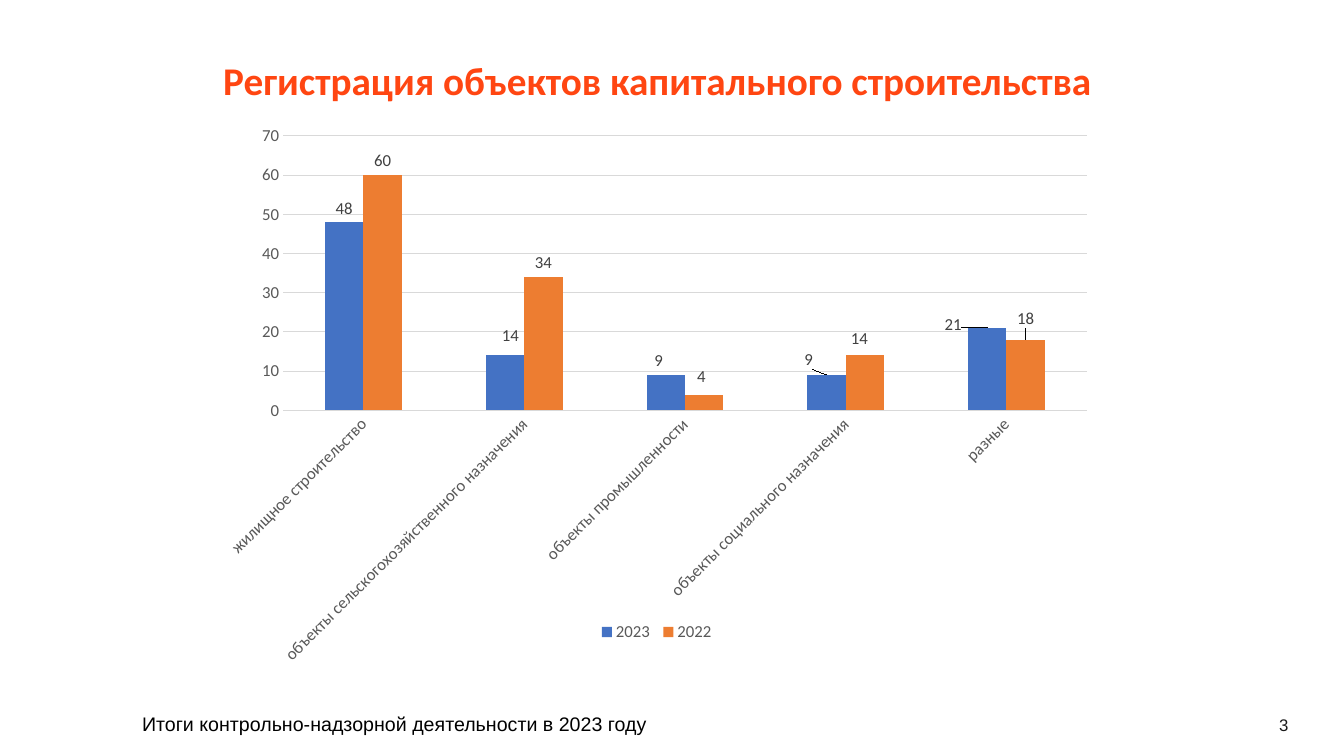
from dataclasses import dataclass

from lxml.etree import SubElement
from pptx import Presentation
from pptx.chart.data import CategoryChartData
from pptx.dml.color import RGBColor
from pptx.enum.chart import XL_CHART_TYPE, XL_LABEL_POSITION, XL_LEGEND_POSITION, XL_TICK_MARK
from pptx.enum.text import MSO_ANCHOR, PP_ALIGN
from pptx.oxml.ns import qn
from pptx.util import Cm, Pt

TITLE = "Регистрация объектов капитального строительства"
FOOTER = "Итоги контрольно-надзорной деятельности в 2023 году"
NUMBER = "3"
GROUPS = [
    "жилищное строительство",
    "объекты сельскогохозяйственного назначения",
    "объекты промышленности",
    "объекты социального назначения",
    "разные",
]
YEARS = [
    ("2023", [48, 14, 9, 9, 21], "4472C4"),
    ("2022", [60, 34, 4, 14, 18], "ED7D31"),
]
SHIFTS = {
    "2023": {1: (0.6, -1), 2: (-0.8, 0), 3: (-2, -0.3), 4: (-3.8, 1.8)},
    "2022": {2: (-0.3, -0.6), 3: (-0.6, -0.5), 4: (0, -1.2)},
}
BOXES = {
    "title": (1.47, 1.12, 30.18, 1.93),
    "chart": (5.26, 2.9, 22.58, 15.06),
    "footer": (3.58, 17.93, 30.12, 0.61),
    "number": (31.83, 17.96, 0.64, 0.61),
}
PLOT = (8.3, 3.5, 89.7, 45.9)
LEGEND = (43, 84, 14, 5)


@dataclass(frozen=True)
class Theme:
    head: str = "FF4612"
    ink: str = "000000"
    page: str = "1A1A1A"
    axis: str = "595959"
    label: str = "404040"
    grid: str = "D9D9D9"
    face: str = "Calibri"
    plain: str = "Arial"
    large: int = 28
    mid: int = 14
    small: int = 12


THEME = Theme()


def style(font, face, size, color, bold=False):
    font.name = face
    font.size = Pt(size)
    font.bold = bold
    font.color.rgb = RGBColor.from_string(color)


def write(frame, text, face=THEME.plain, size=THEME.mid, color=THEME.ink,
          bold=False, align=PP_ALIGN.LEFT, anchor=MSO_ANCHOR.TOP, space=1.0, inset=0):
    frame.word_wrap = True
    frame.vertical_anchor = anchor
    frame.margin_left = frame.margin_right = Cm(inset)
    frame.margin_top = frame.margin_bottom = Cm(inset / 2)
    para = frame.paragraphs[0]
    para.alignment = align
    para.line_spacing = space
    run = para.add_run()
    run.text = text
    style(run.font, face, size, color, bold)


def place(node, index, spot, inner=False):
    for old in node.findall(qn("c:layout")):
        node.remove(old)
    layout = SubElement(node, qn("c:layout"))
    node.insert(index, layout)
    manual = SubElement(layout, qn("c:manualLayout"))
    rules = [("layoutTarget", "inner")] if inner else []
    if len(spot) == 4:
        rules += [("xMode", "edge"), ("yMode", "edge")]
    rules += [(key, f"{part / 100:.3f}") for key, part in zip("xywh", spot)]
    for key, value in rules:
        SubElement(manual, qn(f"c:{key}")).set("val", value)


def draw_chart(slide):
    data = CategoryChartData()
    data.categories = GROUPS
    for year, values, color in YEARS:
        data.add_series(year, values)
    box = map(Cm, BOXES["chart"])
    chart = slide.shapes.add_chart(XL_CHART_TYPE.COLUMN_CLUSTERED, *box, data).chart
    chart.has_title = False
    style(chart.font, THEME.face, THEME.small, THEME.axis)
    line = RGBColor.from_string(THEME.grid)
    cats, vals = chart.category_axis, chart.value_axis
    for axis in (cats, vals):
        axis.major_tick_mark = axis.minor_tick_mark = XL_TICK_MARK.NONE
        style(axis.tick_labels.font, THEME.face, THEME.small, THEME.axis)
    cats.tick_labels.font._element.getparent().getparent().getparent().find(
        qn("a:bodyPr")).set("rot", "-2700000")
    vals.minimum_scale, vals.maximum_scale, vals.major_unit = 0, 70, 10
    vals.has_major_gridlines = True
    vals.format.line.fill.background()
    for rule in (cats.format.line, vals.major_gridlines.format.line):
        rule.color.rgb = line
        rule.width = Pt(0.75)
    plot = chart.plots[0]
    plot.gap_width, plot.overlap = 219, 0
    plot.vary_by_categories = False
    for bars, (year, values, color) in zip(plot.series, YEARS):
        bars.format.fill.solid()
        bars.format.fill.fore_color.rgb = RGBColor.from_string(color)
        bars.invert_if_negative = False
        tags = bars.data_labels
        tags.show_value = True
        tags.position = XL_LABEL_POSITION.OUTSIDE_END
        style(tags.font, THEME.face, THEME.small, THEME.label)
        for index, shift in SHIFTS[year].items():
            tag = bars.points[index].data_label
            style(tag.font, THEME.face, THEME.small, THEME.label)
            tag.position = XL_LABEL_POSITION.OUTSIDE_END
        for node in tags._element.findall(qn("c:dLbl")):
            index = int(node.find(qn("c:idx")).get("val"))
            place(node, 1, SHIFTS[year][index])
    chart.has_legend = True
    legend = chart.legend
    legend.position = XL_LEGEND_POSITION.BOTTOM
    legend.include_in_layout = False
    style(legend.font, THEME.face, THEME.small, THEME.axis)
    place(legend._element, 1, LEGEND)
    place(plot._element.getparent(), 0, PLOT, inner=True)


def main():
    deck = Presentation()
    deck.slide_width, deck.slide_height = Cm(33.87), Cm(19.05)
    slide = deck.slides.add_slide(deck.slide_layouts[5])
    title = slide.shapes.title
    title.left, title.top, title.width, title.height = map(Cm, BOXES["title"])
    write(title.text_frame, TITLE, face=THEME.face, size=THEME.large, color=THEME.head,
          bold=True, align=PP_ALIGN.CENTER, anchor=MSO_ANCHOR.MIDDLE, space=0.9, inset=0.25)
    draw_chart(slide)
    footer = slide.shapes.add_textbox(*map(Cm, BOXES["footer"]))
    write(footer.text_frame, FOOTER)
    number = slide.shapes.add_textbox(*map(Cm, BOXES["number"]))
    write(number.text_frame, NUMBER, color=THEME.page, size=THEME.small,
          align=PP_ALIGN.RIGHT, anchor=MSO_ANCHOR.MIDDLE)
    deck.save("out.pptx")


if __name__ == "__main__":
    main()
